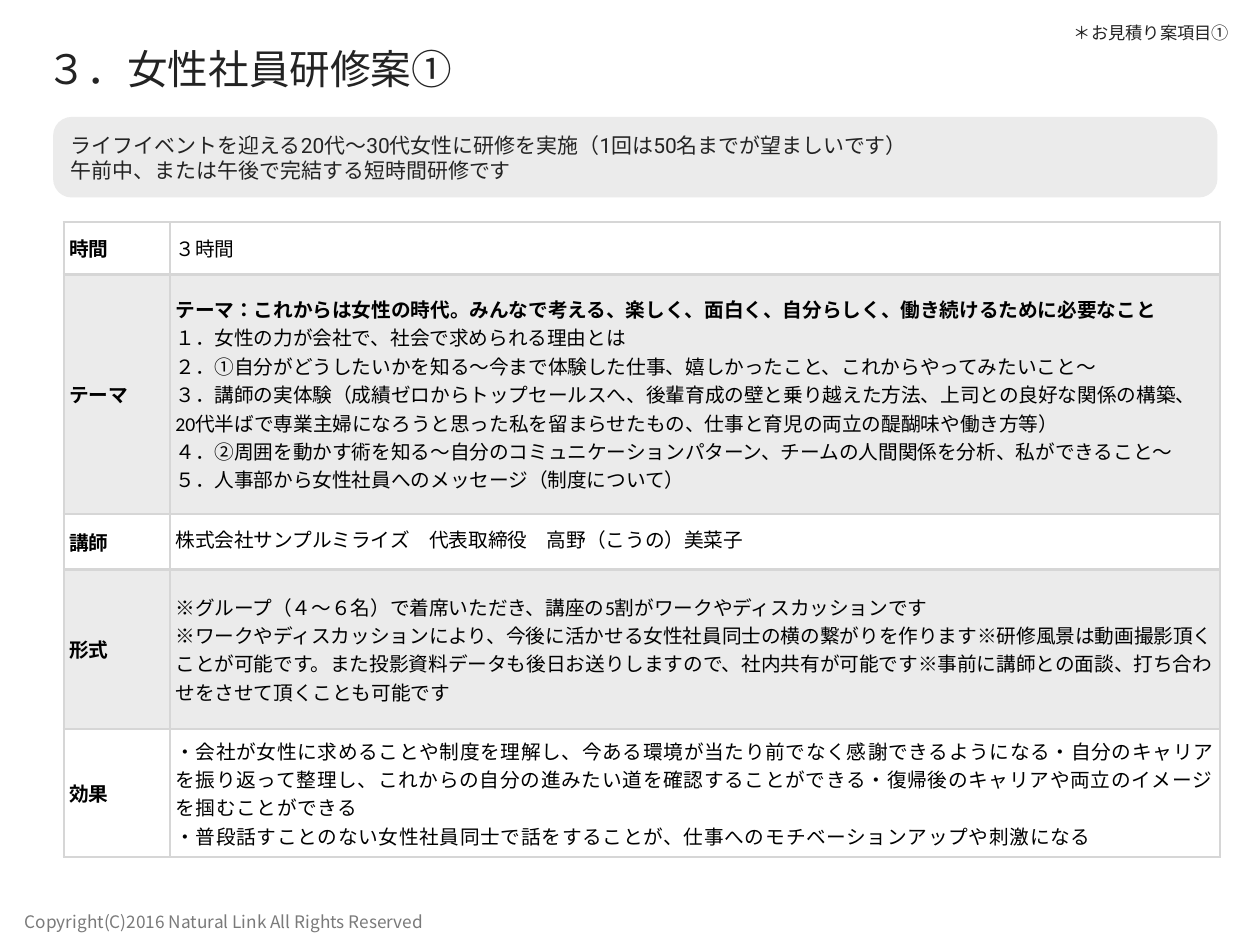
from dataclasses import dataclass

from pptx import Presentation
from pptx.dml.color import RGBColor
from pptx.enum.shapes import MSO_SHAPE as Preset
from pptx.enum.text import MSO_ANCHOR as Anchor, MSO_AUTO_SIZE as AutoSize, PP_ALIGN as Align
from pptx.oxml.ns import qn
from pptx.slide import Slide
from pptx.table import _Cell as Cell
from pptx.text.text import TextFrame
from pptx.util import Inches, Pt
from lxml.etree import SubElement

COLORS = {
    "ink": "232323",
    "black": "000000",
    "footer": "7A7A7A",
    "panel": "EBEBEB",
    "white": "FFFFFF",
    "border": "D6D6D6",
}
JAPANESE_FONT = "Noto Sans CJK JP"
MARGIN = Inches(0.06)


@dataclass(frozen=True)
class TextStyle:
    size: float
    font: str = "Roboto"
    color: str = "ink"
    bold: bool = False
    tracking: int = 0  # hundredths of a point
    line_spacing: float = 1.0


@dataclass(frozen=True)
class TextBox:
    text: str
    left: float
    top: float
    width: float
    height: float
    style: TextStyle
    wrap: bool = True


@dataclass(frozen=True)
class PlanRow:
    label: str
    text: str
    height: float
    style: TextStyle
    shaded: bool = False
    bold_lead: bool = False


LABEL = TextStyle(16, "Calibri", "black", bold=True)
DETAIL = TextStyle(16, "Calibri", "black")
SPEAKER = TextStyle(16, "Calibri", "black", line_spacing=0.7)
EFFECT = TextStyle(16, JAPANESE_FONT, "black", tracking=60)

TITLE = TextBox("３．女性社員研修案①", 0.46, 0.48, 13.31, 0.58, TextStyle(33))
TEXT_BOXES = [
    TextBox("Copyright(C)2016 Natural Link All Rights Reserved",
            0.22, 10.25, 7.57, 0.31, TextStyle(14, JAPANESE_FONT, "footer")),
    TextBox("ライフイベントを迎える20代〜30代女性に研修を実施（1回は50名までが望ましいです）\n"
            "午前中、または午後で完結する短時間研修です",
            0.74, 1.4, 12.74, 0.75, TextStyle(17)),
    TextBox("＊お見積り案項目①", 12.06, 0.24, 1.88, 0.31,
            TextStyle(14, line_spacing=0.7), wrap=False),
]

# \n starts a paragraph, \v breaks a line inside one
PLAN_ROWS = [
    PlanRow("時間", "３時間", 0.59, DETAIL),
    PlanRow("テーマ",
            "テーマ：これからは女性の時代。みんなで考える、楽しく、面白く、自分らしく、働き続けるために必要なこと\n"
            "１．女性の力が会社で、社会で求められる理由とは\n"
            "２．①自分がどうしたいかを知る〜今まで体験した仕事、嬉しかったこと、これからやってみたいこと〜\n"
            "３．講師の実体験（成績ゼロからトップセールスへ、後輩育成の壁と乗り越えた方法、上司との良好な関係の構築、\n"
            "20代半ばで専業主婦になろうと思った私を留まらせたもの、仕事と育児の両立の醍醐味や働き方等）\n"
            "４．②周囲を動かす術を知る〜自分のコミュニケーションパターン、チームの人間関係を分析、私ができること〜\v"
            "５．人事部から女性社員へのメッセージ（制度について）",
            2.7, DETAIL, shaded=True, bold_lead=True),
    PlanRow("講師", "株式会社サンプルミライズ　代表取締役　高野（こうの）美菜子", 0.63, SPEAKER),
    PlanRow("形式",
            "※グループ（４〜６名）で着席いただき、講座の5割がワークやディスカッションです\v"
            "※ワークやディスカッションにより、今後に活かせる女性社員同士の横の繋がりを作ります"
            "※研修風景は動画撮影頂くことが可能です。また投影資料データも後日お送りしますので、社内共有が可能です"
            "※事前に講師との面談、打ち合わせをさせて頂くことも可能です",
            1.8, DETAIL, shaded=True),
    PlanRow("効果",
            "・会社が女性に求めることや制度を理解し、今ある環境が当たり前でなく感謝できるようになる"
            "・自分のキャリアを振り返って整理し、これからの自分の進みたい道を確認することができる"
            "・復帰後のキャリアや両立のイメージを掴むことができる\v"
            "・普段話すことのない女性社員同士で話をすることが、仕事へのモチベーションアップや刺激になる",
            1.45, EFFECT),
]
COLUMN_WIDTHS = [1.2, 11.85]


def rgb(name: str) -> RGBColor:
    return RGBColor.from_string(COLORS[name])


def write_text(frame: TextFrame, text: str, style: TextStyle) -> None:
    frame.text = text
    for paragraph in frame.paragraphs:
        paragraph.alignment = Align.LEFT
        paragraph.line_spacing = style.line_spacing
        for run in paragraph.runs:
            run.font.size = Pt(style.size)
            run.font.name = style.font
            run.font.bold = style.bold
            run.font.color.rgb = rgb(style.color)
            properties = run.font._element
            properties.set("lang", "ja-JP")
            if style.tracking:
                properties.set("spc", str(style.tracking))
            SubElement(properties, qn("a:ea"), typeface=JAPANESE_FONT)


def fill_text_box(shape, box: TextBox) -> None:
    shape.left, shape.top = Inches(box.left), Inches(box.top)
    shape.width, shape.height = Inches(box.width), Inches(box.height)
    frame = shape.text_frame
    frame.word_wrap = box.wrap
    frame.auto_size = AutoSize.NONE
    frame.vertical_anchor = Anchor.MIDDLE
    frame.margin_left = frame.margin_right = MARGIN
    frame.margin_top = frame.margin_bottom = MARGIN
    write_text(frame, box.text, box.style)


def add_panel(slide: Slide) -> None:
    panel = slide.shapes.add_shape(Preset.ROUNDED_RECTANGLE, Inches(0.6), Inches(1.32),
                                   Inches(13.14), Inches(0.91))
    panel.adjustments[0] = 0.23
    panel.shadow.inherit = False
    panel.fill.solid()
    panel.fill.fore_color.rgb = rgb("panel")
    panel.line.fill.background()


def format_cell(cell: Cell, text: str, style: TextStyle, fill: str) -> None:
    write_text(cell.text_frame, text, style)
    cell.vertical_anchor = Anchor.MIDDLE
    cell.margin_left = cell.margin_right = MARGIN
    cell.margin_top = cell.margin_bottom = MARGIN
    # Borders come before the fill in the cell properties
    properties = cell._tc.get_or_add_tcPr()
    for side in ("lnL", "lnR", "lnT", "lnB"):
        line = SubElement(properties, qn(f"a:{side}"), w=str(Pt(2)))
        solid = SubElement(line, qn("a:solidFill"))
        SubElement(solid, qn("a:srgbClr"), val=COLORS["border"])
    cell.fill.solid()
    cell.fill.fore_color.rgb = rgb(fill)


def add_plan_table(slide: Slide) -> None:
    table = slide.shapes.add_table(
        len(PLAN_ROWS), len(COLUMN_WIDTHS), Inches(0.72), Inches(2.51),
        Inches(sum(COLUMN_WIDTHS)), Inches(sum(row.height for row in PLAN_ROWS))).table
    table.first_row = table.horz_banding = False
    for column, width in zip(table.columns, COLUMN_WIDTHS):
        column.width = Inches(width)
    for index, row in enumerate(PLAN_ROWS):
        table.rows[index].height = Inches(row.height)
        fill = "panel" if row.shaded else "white"
        format_cell(table.cell(index, 0), row.label, LABEL, fill)
        detail = table.cell(index, 1)
        format_cell(detail, row.text, row.style, fill)
        if row.bold_lead:
            detail.text_frame.paragraphs[0].runs[0].font.bold = True


def main() -> None:
    presentation = Presentation()
    presentation.slide_width, presentation.slide_height = Inches(14.22), Inches(10.67)
    slide = presentation.slides.add_slide(presentation.slide_layouts[5])

    # Heading and grey panel
    fill_text_box(slide.shapes.title, TITLE)
    add_panel(slide)

    # Lead text, footer and estimate note
    for box in TEXT_BOXES:
        fill_text_box(slide.shapes.add_textbox(0, 0, 0, 0), box)

    # Training plan
    add_plan_table(slide)
    presentation.save("out.pptx")


if __name__ == "__main__":
    main()
